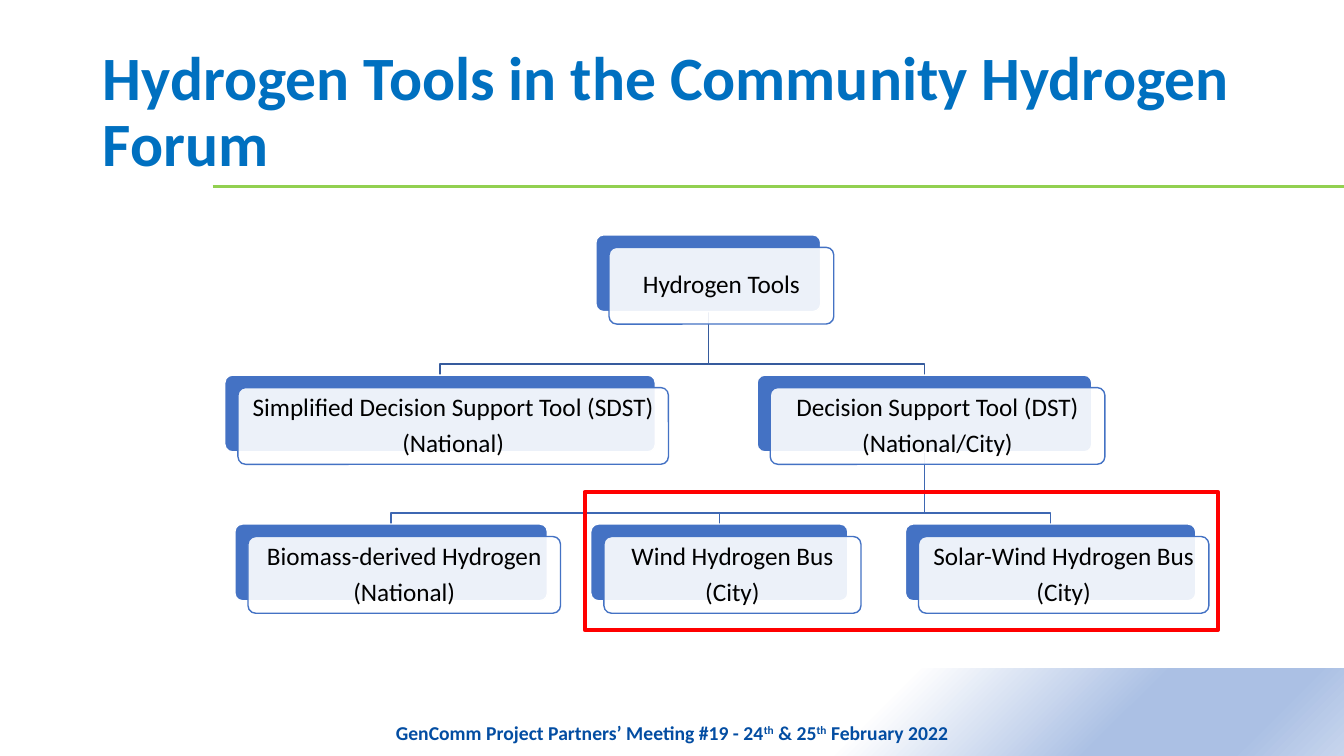
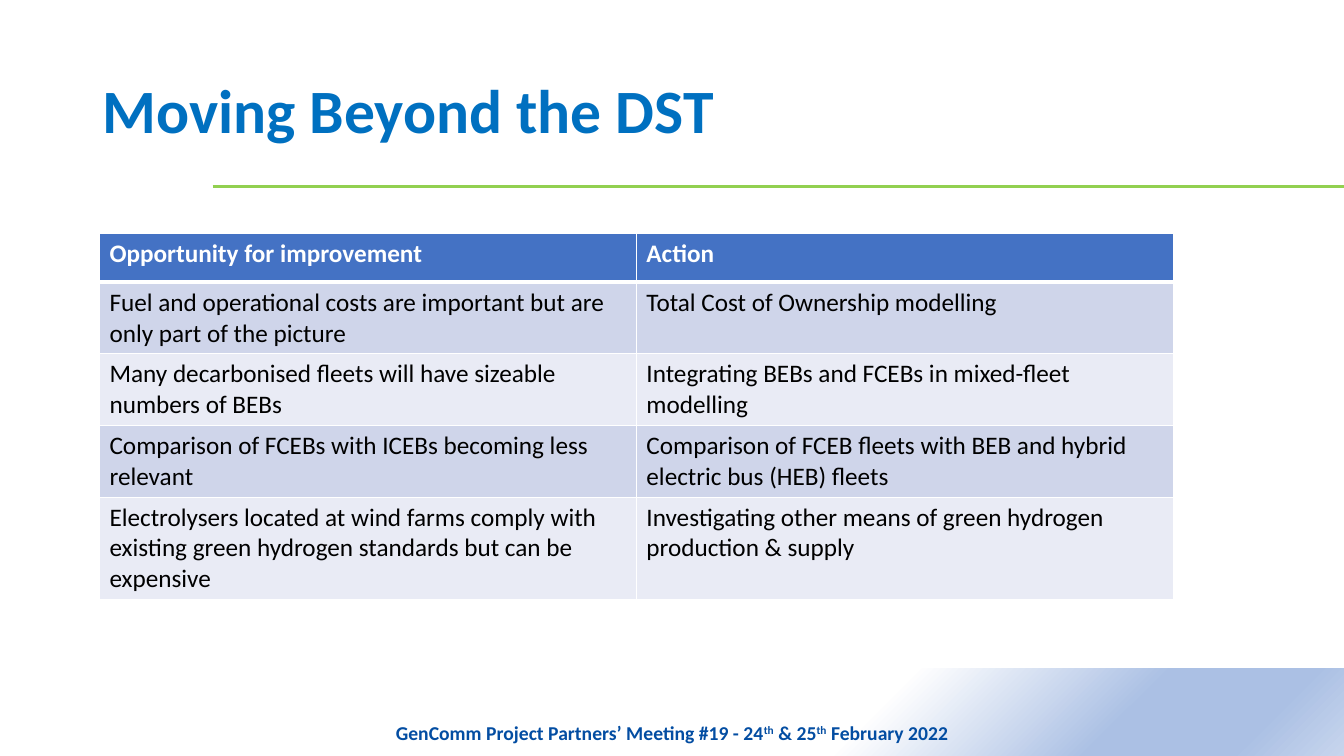
from typing import NamedTuple

from lxml.etree import SubElement
from pptx import Presentation
from pptx.dml.color import RGBColor as RGB
from pptx.enum.shapes import MSO_CONNECTOR as CONN, MSO_SHAPE as SHAPE
from pptx.enum.text import MSO_ANCHOR as ANCHOR, MSO_AUTO_SIZE as FIT, PP_ALIGN as ALIGN
from pptx.oxml.ns import qn
from pptx.util import Inches, Pt

FONT = "Calibri"
WHITE = RGB(0xFF, 0xFF, 0xFF)
BLACK = RGB(0, 0, 0)
RED = RGB(0xFF, 0, 0)
GREEN = RGB(0x92, 0xD0, 0x50)
BLUE = RGB(0x44, 0x72, 0xC4)
TITLE_BLUE = RGB(0x00, 0x70, 0xC0)
FOOTER_BLUE = RGB(0x03, 0x4D, 0xA2)
UPPER_EDGE = RGB(0x36, 0x5B, 0x9D)
LOWER_EDGE = RGB(0x3E, 0x67, 0xB2)
MIST = RGB(0xAB, 0xC0, 0xE4)
PALE_MIST = RGB(0xC7, 0xD5, 0xED)
ROW_TINTS = [RGB(0xCF, 0xD5, 0xEA), RGB(0xE9, 0xEB, 0xF5)]
BAND_STOPS = [(64, WHITE), (82, MIST), (92, MIST), (100, PALE_MIST)]

FOOTER = [("GenComm Project Partners’ Meeting #19 - 24", False), ("th", True),
          (" & 25", False), ("th", True), (" February 2022", False)]

ROW_TOPS = [0, 37.1, 76.5]
CARD_HEIGHT = 20.3
CARD_SHIFT = (1.33, 3.3)
EDGE_DROP = 2.93
TOOLS = {
    "root": (37.67, 22.82, 0, ["Hydrogen Tools"]),
    "dst": (54.04, 33.98, 1, ["Decision Support Tool (DST)", "(National/City)"]),
    "biomass": (1.02, 31.73, 2, ["Biomass-derived Hydrogen", "(National)"]),
    "wind": (37.15, 26.1, 2, ["Wind Hydrogen Bus", "(City)"]),
    "solar": (69.09, 29.48, 2, ["Solar-Wind Hydrogen Bus", "(City)"]),
    "sdst": (0, 43.71, 1, ["Simplified Decision Support Tool (SDST)", "(National)"]),
}
EDGES = [("root", "sdst"), ("dst", "solar"), ("dst", "wind"),
         ("dst", "biomass"), ("root", "dst")]

ACTIONS = [
    ("Opportunity for improvement", "Action"),
    ("Fuel and operational costs are important but are only part of the picture",
     "Total Cost of Ownership modelling"),
    ("Many decarbonised fleets will have sizeable numbers of BEBs",
     "Integrating BEBs and FCEBs in mixed-fleet modelling"),
    ("Comparison of FCEBs with ICEBs becoming less relevant",
     "Comparison of FCEB fleets with BEB and hybrid electric bus (HEB) fleets"),
    ("Electrolysers located at wind farms comply with existing green hydrogen "
     "standards but can be expensive",
     "Investigating other means of green hydrogen production & supply"),
]
ROW_HEIGHTS = [0.48, 0.71, 0.71, 0.71, 1.01]


class Box(NamedTuple):
    """A rectangle that is divided into a grid of 100 columns and 100 rows."""
    left: int
    top: int
    width: int
    height: int

    def at(self, x, y, w, h):
        """Return the part of the box at the given columns and rows."""
        return Box(round(self.left + self.width * x / 100),
                   round(self.top + self.height * y / 100),
                   round(self.width * w / 100), round(self.height * h / 100))


PAGE = Box(0, 0, Inches(13.33), Inches(7.5))


def add_run(p, text, size, color, bold=False):
    """Add one formatted run to a paragraph."""
    r = p.add_run()
    r.text = text
    r.font.name, r.font.size, r.font.bold = FONT, Pt(size), bold
    r.font.color.rgb = color
    return r


def add_block(s, kind, box, fill=None, line=None, width=1):
    """Add a flat preset shape with an optional fill and outline."""
    sp = s.shapes.add_shape(kind, *box)
    sp.shadow.inherit = False
    if fill is None:
        sp.fill.background()
    else:
        sp.fill.solid()
        sp.fill.fore_color.rgb = fill
    if line is None:
        sp.line.fill.background()
    else:
        sp.line.color.rgb, sp.line.width = line, Pt(width)
    return sp


def style_layout(layout, s):
    """Place the title area, rule and shaded band on the layout."""
    title = layout.placeholders[0]
    title.left, title.top, title.width, title.height = PAGE.at(6.9, 5.33, 86.27, 19.33)
    rule_box = PAGE.at(15.83, 24.67, 84.17, 0)
    rule = s.shapes.add_connector(CONN.STRAIGHT, rule_box.left, rule_box.top,
                                  PAGE.width, rule_box.top)
    rule.line.color.rgb, rule.line.width = GREEN, Pt(2.25)
    SubElement(rule.element.spPr, qn("a:effectLst"))
    band = add_block(s, SHAPE.RECTANGLE, PAGE.at(0, 88.4, 100, 11.6))
    band.fill.gradient()
    band.fill.gradient_angle = 315
    stops = band.element.spPr.find(".//" + qn("a:gsLst"))
    stops.clear()
    for pos, color in BAND_STOPS:
        stop = SubElement(stops, qn("a:gs"), pos=str(pos * 1000))
        SubElement(stop, qn("a:srgbClr"), val=str(color))
    for sp in (rule, band):
        layout.shapes.element.append(sp.element)


def add_title(s, text):
    """Fill the title placeholder."""
    tf = s.shapes.title.text_frame
    tf.auto_size, tf.vertical_anchor = FIT.NONE, ANCHOR.MIDDLE
    p = tf.paragraphs[0]
    p.alignment, p.line_spacing = ALIGN.LEFT, 0.9
    add_run(p, text, 44, TITLE_BLUE, True)


def add_footer(s, box):
    """Add the meeting line with raised ordinals."""
    tf = s.shapes.add_textbox(*box).text_frame
    tf.word_wrap, tf.auto_size = True, FIT.SHAPE_TO_FIT_TEXT
    p = tf.paragraphs[0]
    p.alignment = ALIGN.CENTER
    for text, raised in FOOTER:
        r = add_run(p, text, 14, FOOTER_BLUE, True)
        if raised:
            r._r.get_or_add_rPr().set("baseline", "30000")


def add_edge(s, parent, child, drop, color):
    """Join the bottom of one card to the top of another with a bent line."""
    x1, y1 = parent.left + parent.width // 2, parent.top + parent.height
    x2, y2 = child.left + child.width // 2, child.top
    fb = s.shapes.build_freeform(x1, y1)
    fb.add_line_segments([(x1, y2 - drop), (x2, y2 - drop), (x2, y2)], close=False)
    sp = fb.convert_to_shape()
    sp.shadow.inherit = False
    sp.fill.background()
    sp.line.color.rgb, sp.line.width = color, Pt(1)


def add_card(s, back, front, lines):
    """Add a blue card with a translucent labelled card over it."""
    cards = [add_block(s, SHAPE.ROUNDED_RECTANGLE, back, BLUE, WHITE),
             add_block(s, SHAPE.ROUNDED_RECTANGLE, front, WHITE, BLUE)]
    for sp in cards:
        sp.adjustments[0] = 0.1
    tint = cards[1].element.spPr.find(qn("a:solidFill"))[0]
    SubElement(tint, qn("a:alpha"), val="90000")
    tf = cards[1].text_frame
    tf.word_wrap, tf.vertical_anchor = True, ANCHOR.MIDDLE
    tf.margin_left = tf.margin_right = tf.margin_top = tf.margin_bottom = Inches(0.07)
    for i, text in enumerate(lines):
        p = tf.add_paragraph() if i else tf.paragraphs[0]
        p.alignment, p.line_spacing, p.space_after = ALIGN.CENTER, 0.9, Pt(6.3)
        add_run(p, text, 18, BLACK)


def add_tree(s, box):
    """Draw the tool hierarchy and frame the city tools."""
    backs = {name: box.at(x, ROW_TOPS[row], w, CARD_HEIGHT)
             for name, (x, w, row, _) in TOOLS.items()}
    drop = box.at(0, 0, 0, EDGE_DROP).height
    for parent, child in EDGES:
        color = UPPER_EDGE if parent == "root" else LOWER_EDGE
        add_edge(s, backs[parent], backs[child], drop, color)
    dx, dy = CARD_SHIFT
    for name, (x, w, row, lines) in TOOLS.items():
        front = box.at(x + dx, ROW_TOPS[row] + dy, w, CARD_HEIGHT)
        add_card(s, backs[name], front, lines)
    add_block(s, SHAPE.RECTANGLE, box.at(36.54, 68, 64.28, 36.53), line=RED, width=3)


def set_borders(cell, top, bottom):
    """Give a cell white borders, with the top and bottom widths in points."""
    tc_pr = cell._tc.get_or_add_tcPr()
    sides = [("L", 1), ("R", 1), ("T", top), ("B", bottom)]
    for i, (side, width) in enumerate(sides):
        ln = SubElement(tc_pr, qn("a:ln" + side), w=str(Pt(width)))
        SubElement(SubElement(ln, qn("a:solidFill")), qn("a:srgbClr"), val=str(WHITE))
        tc_pr.insert(i, ln)


def add_actions(s, box):
    """Add the table of opportunities and actions."""
    table = s.shapes.add_table(len(ACTIONS), 2, *box).table
    for i, texts in enumerate(ACTIONS):
        table.rows[i].height = Inches(ROW_HEIGHTS[i])
        header = i == 0
        for j, text in enumerate(texts):
            cell = table.cell(i, j)
            cell.fill.solid()
            cell.fill.fore_color.rgb = BLUE if header else ROW_TINTS[(i - 1) % 2]
            set_borders(cell, 3 if i == 1 else 1, 3 if header else 1)
            add_run(cell.text_frame.paragraphs[0], text, 18,
                    WHITE if header else BLACK, header)


def main():
    """Build and save the slides."""
    prs = Presentation()
    prs.slide_width, prs.slide_height = PAGE.width, PAGE.height
    layout = prs.slide_layouts[5]
    slides = [
        ("Hydrogen Tools in the Community Hydrogen Forum", add_tree,
         PAGE.at(16.73, 31.07, 73.29, 50)),
        ("Moving Beyond the DST", add_actions, PAGE.at(7.4, 30.93, 79.9, 48.3)),
    ]
    for i, (title, add_content, box) in enumerate(slides):
        s = prs.slides.add_slide(layout)
        if i == 0:
            style_layout(layout, s)
        add_title(s, title)
        add_content(s, box)
        add_footer(s, PAGE.at(28.58, 94.67, 42.84, 4.53))
    prs.save("out.pptx")


if __name__ == "__main__":
    main()
